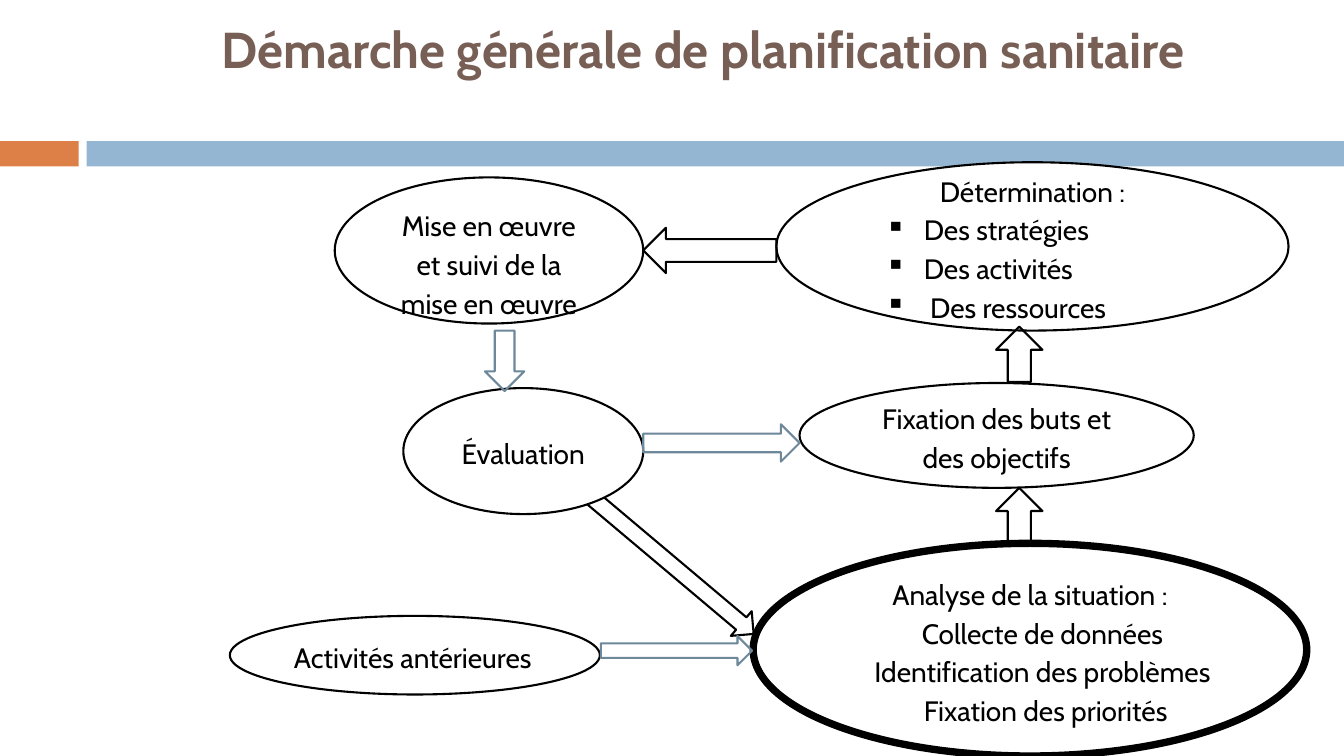
from dataclasses import dataclass

from lxml import etree
from pptx import Presentation
from pptx.dml.color import RGBColor
from pptx.enum.shapes import MSO_SHAPE
from pptx.enum.text import MSO_ANCHOR, PP_ALIGN
from pptx.oxml.ns import qn
from pptx.util import Inches, Pt

RECTANGLE = MSO_SHAPE.RECTANGLE
ELLIPSE = MSO_SHAPE.OVAL
UP = MSO_SHAPE.UP_ARROW
DOWN = MSO_SHAPE.DOWN_ARROW
LEFT_ARROW = MSO_SHAPE.LEFT_ARROW
RIGHT_ARROW = MSO_SHAPE.RIGHT_ARROW
TOP = MSO_ANCHOR.TOP
MIDDLE = MSO_ANCHOR.MIDDLE
LEFT = PP_ALIGN.LEFT
CENTER = PP_ALIGN.CENTER

FONT = "Cabin"
BLACK = "000000"
WHITE = "FFFFFF"
STEEL = "6D879B"
BROWN = "775F55"

Box = tuple[float, float, float, float]


@dataclass
class Line:
    text: str
    alignment: PP_ALIGN = CENTER
    margin: float = 0
    indent: float = 0
    bullet: str = ""


@dataclass
class Step:
    box: Box
    lines: list[Line]
    anchor: MSO_ANCHOR = MIDDLE
    line_width: float = 1.5


@dataclass
class Arrow:
    kind: MSO_SHAPE
    box: Box
    color: str = BLACK
    rotation: float = 0


@dataclass
class Band:
    box: Box
    color: str


def collected(text: str) -> Line:
    return Line(text, margin=0.5, indent=-0.25)


def bulleted(text: str) -> Line:
    return Line(text, LEFT, 0.62, -0.38, "▪")


BANDS = [
    Band((0, 1.4, 0.78, 0.25), "DD8047"),
    Band((0.86, 1.4, 12.47, 0.25), "94B6D2"),
]

STEPS = [
    Step((7.47, 5.39, 5.49, 2.11), [
        Line("Analyse de la situation\u00a0:"),
        collected("Collecte de données"),
        collected("Identification des problèmes"),
        collected(" Fixation des priorités"),
    ], line_width=5.25),
    Step((7.93, 3.8, 3.91, 1.04), [Line("Fixation des buts et des objectifs")]),
    Step((7.7, 1.61, 5.08, 1.67), [
        Line("Détermination\u00a0:"),
        bulleted("Des stratégies"),
        bulleted("Des activités"),
        bulleted(" Des ressources"),
    ]),
    Step((3.32, 1.76, 3.06, 1.45),
         [Line("Mise en œuvre et suivi de la mise en œuvre")], TOP),
    Step((4, 3.85, 2.38, 1.25), [Line("Évaluation")]),
    Step((2.28, 6.11, 3.67, 0.78), [Line("Activités antérieures", LEFT)]),
]

EVALUATION_TO_ANALYSIS = Arrow(RIGHT_ARROW, (5.56, 5.43, 2.17, 0.32), rotation=40.1)

ARROWS = [
    Arrow(UP, (9.88, 4.84, 0.46, 0.53)),
    Arrow(UP, (9.88, 3.24, 0.46, 0.55)),
    Arrow(LEFT_ARROW, (6.38, 2.26, 1.32, 0.45)),
    Arrow(RIGHT_ARROW, (6.38, 4.21, 1.55, 0.37), STEEL),
    Arrow(DOWN, (4.81, 3.28, 0.39, 0.6), STEEL),
    Arrow(RIGHT_ARROW, (5.96, 6.31, 1.5, 0.29), STEEL),
]


def rgb(color: str) -> RGBColor:
    return RGBColor.from_string(color)


def set_font(paragraph, size: float, color: str, bold: bool = False) -> None:
    font = paragraph.font
    font.name = FONT
    font.size = Pt(size)
    font.bold = bold
    font.color.rgb = rgb(color)


def add_shape(slide, kind: MSO_SHAPE, box: Box, fill: str = "",
              line: str = "", line_width: float = 1.5):
    shape = slide.shapes.add_shape(kind, *map(Inches, box))
    shape.shadow.inherit = False
    if fill:
        shape.fill.solid()
        shape.fill.fore_color.rgb = rgb(fill)
    else:
        shape.fill.background()
    if line:
        shape.line.color.rgb = rgb(line)
        shape.line.width = Pt(line_width)
    else:
        shape.line.fill.background()
    return shape


def add_title(slide, text: str) -> None:
    frame = slide.shapes.add_textbox(*map(Inches, (0.89, 0.18, 12.17, 1.15))).text_frame
    frame.word_wrap = True
    frame.vertical_anchor = TOP
    frame.margin_top = 0
    paragraph = frame.paragraphs[0]
    paragraph.text = text
    paragraph.alignment = CENTER
    set_font(paragraph, 36, BROWN, True)


def write_line(paragraph, line: Line) -> None:
    paragraph.text = line.text
    paragraph.alignment = line.alignment
    paragraph.line_spacing = 1.15
    set_font(paragraph, 20, BLACK)
    properties = paragraph._p.get_or_add_pPr()
    if line.margin:
        properties.set("marL", str(Inches(line.margin)))
        properties.set("indent", str(Inches(line.indent)))
    if line.bullet:
        bullet = etree.Element(qn("a:buChar"), char=line.bullet)
        properties.find(qn("a:defRPr")).addprevious(bullet)


def add_step(slide, step: Step) -> None:
    shape = add_shape(slide, ELLIPSE, step.box, WHITE, BLACK, step.line_width)
    frame = shape.text_frame
    frame.word_wrap = True
    frame.vertical_anchor = step.anchor
    for index, line in enumerate(step.lines):
        paragraph = frame.add_paragraph() if index else frame.paragraphs[0]
        write_line(paragraph, line)


def add_arrow(slide, arrow: Arrow) -> None:
    shape = add_shape(slide, arrow.kind, arrow.box, line=arrow.color)
    shape.rotation = arrow.rotation


def main() -> None:
    presentation = Presentation()
    presentation.slide_width = Inches(13.33)
    presentation.slide_height = Inches(7.5)
    slide = presentation.slides.add_slide(presentation.slide_layouts[6])
    for band in BANDS:
        add_shape(slide, RECTANGLE, band.box, band.color)
    add_arrow(slide, EVALUATION_TO_ANALYSIS)
    add_title(slide, "Démarche générale de planification sanitaire")
    for step in STEPS:
        add_step(slide, step)
    for arrow in ARROWS:
        add_arrow(slide, arrow)
    presentation.save("out.pptx")


if __name__ == "__main__":
    main()
